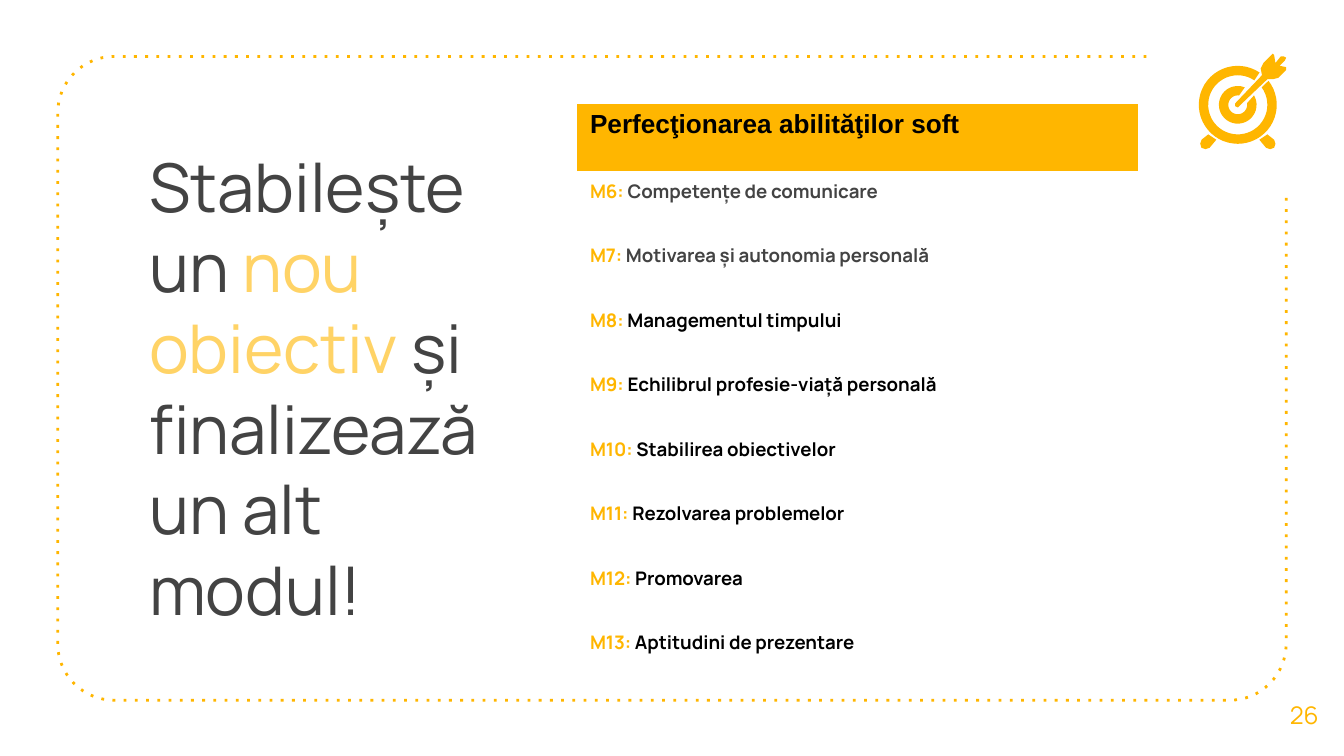
"""Build a slide that lists the soft skills modules beside a call to action."""
from dataclasses import dataclass
from math import cos, radians, sin

from pptx import Presentation
from pptx.dml.color import RGBColor
from pptx.enum.dml import MSO_LINE
from pptx.enum.text import MSO_ANCHOR, MSO_AUTO_SIZE, PP_ALIGN
from pptx.shapes.freeform import FreeformBuilder
from pptx.text.text import Font, TextFrame, _Paragraph
from pptx.util import Inches, Pt

AMBER, PALE_AMBER, GRAY, BLACK = "FFB600", "FFD366", "434343", "000000"
BODY_FONT = "Manrope"
PAGE_WIDTH = 10
PAGE_HEIGHT = PAGE_WIDTH * 9 / 16
HEADER_HEIGHT, ROW_HEIGHT = 0.51, 0.48
Points = list[tuple[float, float]]


@dataclass(frozen=True)
class Span:
    text: str
    color: str


@dataclass(frozen=True)
class Module:
    number: int
    name: str
    color: str = BLACK


@dataclass(frozen=True)
class Ring:
    outer_radius: float
    inner_radius: float
    outer_angles: tuple[float, float]
    inner_angles: tuple[float, float]


TITLE = [
    Span("Stabilește un ", GRAY),
    Span("nou obiectiv ", PALE_AMBER),
    Span("și finalizează un alt modul!", GRAY),
]
MODULES = [
    Module(6, "Competențe de comunicare", GRAY),
    Module(7, "Motivarea și autonomia personală", GRAY),
    Module(8, "Managementul timpului"),
    Module(9, "Echilibrul profesie-viață personală"),
    Module(10, "Stabilirea obiectivelor"),
    Module(11, "Rezolvarea problemelor"),
    Module(12, "Promovarea"),
    Module(13, "Aptitudini de prezentare"),
]
TARGET_CENTER = (9.21, 0.78)
RINGS = [
    Ring(0.29, 0.22, (-38, 304), (-36, 304)),
    Ring(0.14, 0.07, (-30, 292), (-10, 278)),
]
LEFT_FOOT = [(8.99, 1), (8.94, 1.04), (8.93, 1.07), (8.94, 1.1), (8.97, 1.11),
             (9, 1.1), (9.05, 1.04), (9.02, 1.02)]
ARROW = [(9.47, 0.4), (9.46, 0.41), (9.4, 0.47), (9.38, 0.51), (9.39, 0.56),
         (9.19, 0.77), (9.19, 0.79), (9.21, 0.8), (9.22, 0.79), (9.43, 0.59),
         (9.47, 0.59), (9.51, 0.58), (9.57, 0.52), (9.57, 0.5), (9.52, 0.49),
         (9.56, 0.45), (9.57, 0.43), (9.55, 0.42), (9.53, 0.42), (9.49, 0.47),
         (9.48, 0.41)]


def rgb(color: str) -> RGBColor:
    """Turn a hex string into a colour."""
    return RGBColor.from_string(color)


def set_font(font: Font, size: float, name: str = BODY_FONT, bold: bool = False) -> None:
    """Set the face, size and weight of a font."""
    font.name, font.size, font.bold = name, Pt(size), bold


def write_spans(para: _Paragraph, spans: list[Span]) -> None:
    """Add coloured runs to a paragraph."""
    for span in spans:
        run = para.add_run()
        run.text = span.text
        run.font.color.rgb = rgb(span.color)


def prepare_frame(frame: TextFrame, anchor: MSO_ANCHOR) -> None:
    """Set wrapping, anchor and even margins on a text frame."""
    frame.word_wrap = True
    frame.auto_size = MSO_AUTO_SIZE.NONE
    frame.vertical_anchor = anchor
    frame.margin_left = frame.margin_right = Inches(0.1)
    frame.margin_top = frame.margin_bottom = Inches(0.1)


def arc(center: tuple[float, float], radius: float, start: float, end: float,
        steps: int) -> Points:
    """Return points along an arc, with angles in degrees."""
    angles = [radians(start + (end - start) * step / steps) for step in range(steps + 1)]
    return [(center[0] + radius * cos(angle), center[1] + radius * sin(angle))
            for angle in angles]


def outline(shapes, points: Points, close: bool) -> FreeformBuilder:
    """Trace points given in inches."""
    corners = [(Inches(x), Inches(y)) for x, y in points]
    builder = shapes.build_freeform(*corners[0], scale=1.0)
    builder.add_line_segments(corners[1:], close=close)
    return builder


def draw_border(shapes) -> None:
    """Draw the open dotted border with rounded corners."""
    left, top, right, bottom, radius = 0.43, 0.42, 9.57, 5.21, 0.42
    points = [
        (8.53, top),
        *arc((left + radius, top + radius), radius, 270, 180, 16),
        *arc((left + radius, bottom - radius), radius, 180, 90, 16),
        *arc((right - radius, bottom - radius), radius, 90, 0, 16),
        (right, 1.46),
    ]
    border = outline(shapes, points, False).convert_to_shape()
    border.shadow.inherit = False
    border.fill.background()
    border.line.color.rgb = rgb(AMBER)
    border.line.width = Pt(1.5)
    border.line.dash_style = MSO_LINE.ROUND_DOT
    border.element.xpath(".//a:prstDash")[0].set("val", "dot")


def draw_target(shapes) -> None:
    """Draw the target with its rings, feet and arrow."""
    right_foot = [(2 * TARGET_CENTER[0] - x, y) for x, y in LEFT_FOOT]
    rings = [
        arc(TARGET_CENTER, ring.outer_radius, *ring.outer_angles, 48)
        + arc(TARGET_CENTER, ring.inner_radius, *ring.inner_angles, 48)[::-1]
        for ring in RINGS
    ]
    group = shapes.add_group_shape()
    for points in [*rings, LEFT_FOOT, right_foot, ARROW]:
        part = outline(group.shapes, points, True).convert_to_shape()
        part.shadow.inherit = False
        part.fill.solid()
        part.fill.fore_color.rgb = rgb(AMBER)
        part.line.fill.background()


def draw_title(title) -> None:
    """Place and write the title."""
    title.left, title.top = Inches(1.01), Inches(0.98)
    title.width, title.height = Inches(2.97), Inches(0.94)
    prepare_frame(title.text_frame, MSO_ANCHOR.TOP)
    para = title.text_frame.paragraphs[0]
    para.alignment = PP_ALIGN.LEFT
    para.line_spacing = Pt(43.2)
    set_font(para.font, 36)
    write_spans(para, TITLE)


def draw_page_number(shapes) -> None:
    """Write the page number in the corner."""
    box = shapes.add_textbox(Inches(9.41), Inches(5.02), Inches(0.59), Inches(0.6))
    prepare_frame(box.text_frame, MSO_ANCHOR.MIDDLE)
    para = box.text_frame.paragraphs[0]
    para.alignment = PP_ALIGN.CENTER
    set_font(para.font, 13)
    write_spans(para, [Span("26", AMBER)])


def draw_modules(shapes) -> None:
    """Draw the table of modules under its header."""
    height = HEADER_HEIGHT + ROW_HEIGHT * len(MODULES)
    table = shapes.add_table(len(MODULES) + 1, 1, Inches(4.29), Inches(0.77),
                             Inches(4.18), Inches(height)).table
    table.first_row = table.horz_banding = False
    table.rows[0].height = Inches(HEADER_HEIGHT)
    header = table.cell(0, 0)
    header.fill.solid()
    header.fill.fore_color.rgb = rgb(AMBER)
    para = header.text_frame.paragraphs[0]
    set_font(para.font, 14, "Arial", True)
    write_spans(para, [Span("Perfecţionarea abilităţilor soft", BLACK)])
    for row, module in enumerate(MODULES, start=1):
        table.rows[row].height = Inches(ROW_HEIGHT)
        cell = table.cell(row, 0)
        cell.fill.background()
        para = cell.text_frame.paragraphs[0]
        set_font(para.font, 10, bold=True)
        write_spans(para, [Span(f"M{module.number}: ", AMBER),
                           Span(module.name, module.color)])


def main() -> None:
    """Build and save the deck."""
    deck = Presentation()
    deck.slide_width, deck.slide_height = Inches(PAGE_WIDTH), Inches(PAGE_HEIGHT)
    page = deck.slides.add_slide(deck.slide_layouts[5])
    draw_border(page.shapes)
    draw_title(page.shapes.title)
    draw_page_number(page.shapes)
    draw_target(page.shapes)
    draw_modules(page.shapes)
    deck.save("out.pptx")


if __name__ == "__main__":
    main()
